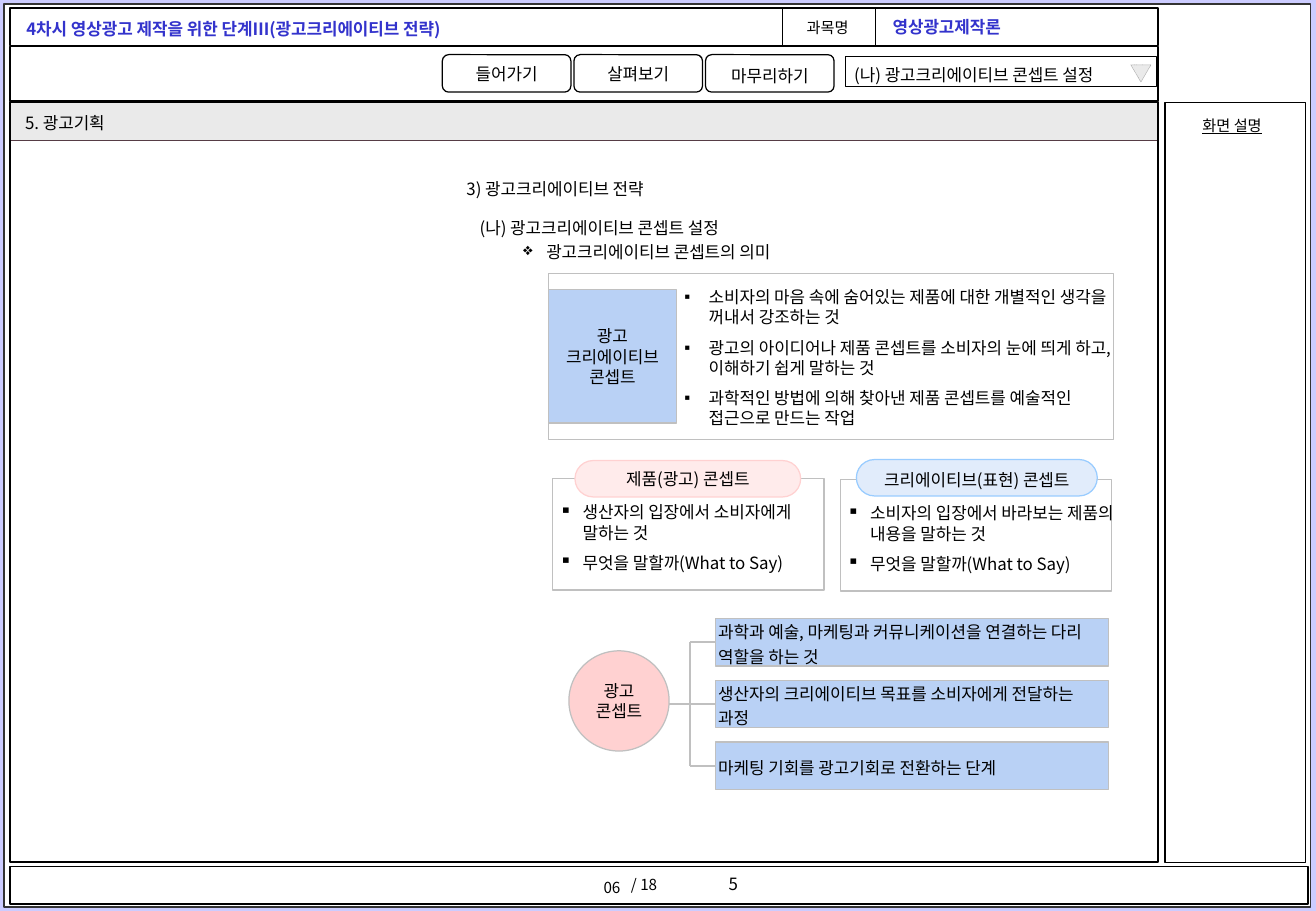
"""Build the storyboard slide on advertising creative concepts."""
from lxml import etree
from pptx import Presentation
from pptx.dml.color import RGBColor
from pptx.enum.dml import MSO_LINE
from pptx.enum.shapes import MSO_CONNECTOR, MSO_SHAPE
from pptx.enum.text import MSO_ANCHOR, MSO_AUTO_SIZE, PP_ALIGN
from pptx.oxml.ns import qn
from pptx.util import Inches, Pt

RECT, ROUND = MSO_SHAPE.RECTANGLE, MSO_SHAPE.ROUNDED_RECTANGLE
OVAL, WEDGE = MSO_SHAPE.OVAL, MSO_SHAPE.ISOSCELES_TRIANGLE
LEFT, MID, RIGHT = PP_ALIGN.LEFT, PP_ALIGN.CENTER, PP_ALIGN.RIGHT
TOP, CENTER = MSO_ANCHOR.TOP, MSO_ANCHOR.MIDDLE
STRAIGHT, FIXED, DOTS = MSO_CONNECTOR.STRAIGHT, MSO_AUTO_SIZE.NONE, MSO_LINE.ROUND_DOT
BLACK = RGBColor(0x00, 0x00, 0x00)
WHITE = RGBColor(0xFF, 0xFF, 0xFF)
INK = RGBColor(0x33, 0x33, 0x33)
NAVY = RGBColor(0x33, 0x33, 0xCC)
LILAC = RGBColor(0xCC, 0xCC, 0xFF)
PALE = RGBColor(0xEA, 0xEA, 0xEA)
PLUM = RGBColor(0x56, 0x3C, 0x45)
GRAY = RGBColor(0x96, 0x96, 0x96)
SILVER = RGBColor(0xC0, 0xC0, 0xC0)
BLUE = RGBColor(0xB9, 0xD1, 0xF5)
ICE = RGBColor(0xE1, 0xEC, 0xFB)
SKY = RGBColor(0x99, 0xCC, 0xFF)
PINK = RGBColor(0xFF, 0xD1, 0xD1)
BLUSH = RGBColor(0xFF, 0xEB, 0xEB)
FONT = "Noto Sans CJK KR"
CELL = Inches(1) / 12
COLS, ROWS = 130, 90
TIGHT = (0.02, 0.05)

deck = Presentation()
deck.slide_width, deck.slide_height = round(COLS * CELL), round(ROWS * CELL)
page = deck.slides.add_slide(deck.slide_layouts[1])
shapes = page.shapes
head, body = page.placeholders


def box(kind, at, fill=None, edge=None, width=0.75):
    """Add a shape, or a text box when kind is None, at grid cells."""
    spot = [round(v * CELL) for v in at]
    if kind is None:
        return shapes.add_textbox(*spot)
    item = shapes.add_shape(kind, *spot)
    item.shadow.inherit = False
    if fill is None:
        item.fill.background()
    else:
        item.fill.solid()
        item.fill.fore_color.rgb = fill
    if edge is None:
        item.line.fill.background()
    else:
        item.line.color.rgb = edge
        item.line.width = Pt(width)
    return item


def write(item, text, size=10, color=BLACK, bold=False, align=LEFT, lead=1.0,
          anchor=TOP, pad=(0.1, 0.05), wrap=True, mark=None, hang=0.19):
    """Fill a shape with formatted text and return its frame."""
    frame = item.text_frame
    frame.text = text
    frame.auto_size = FIXED
    frame.word_wrap = wrap
    frame.vertical_anchor = anchor
    frame.margin_left = frame.margin_right = Inches(pad[0])
    frame.margin_top = frame.margin_bottom = Inches(pad[1])
    for rank, para in enumerate(frame.paragraphs):
        para.alignment = align
        para.line_spacing = lead
        para.space_before = Pt(6 if rank and mark else 0)
        if mark:
            props = para._p.get_or_add_pPr()
            props.set("marL", str(Inches(hang)))
            props.set("indent", str(-Inches(hang)))
            etree.SubElement(props, qn("a:buChar")).set("char", mark)
        for run in para.runs:
            run.font.size = Pt(size)
            run.font.bold = bold
            run.font.color.rgb = color
            run.font.name = FONT
            east = etree.SubElement(run._r.get_or_add_rPr(), qn("a:ea"))
            east.set("typeface", FONT)
    return frame


for at, fill, edge, width in [
    ((0, 0, COLS, ROWS), LILAC, None, 0),
    ((0.4, 0.4, 129.1, 89.2), WHITE, INK, 0.75),
    ((1, 10.1, 113.4, 3.8), PALE, PLUM, 0.25),
    ((1, 85.6, 128.2, 3.7), None, BLACK, 1),
    ((1, 10.1, 113.4, 75.1), None, BLACK, 1),
    ((115.1, 10.1, 13.9, 75.1), None, BLACK, 0.75),
    ((1, 0.8, 113.4, 3.7), None, BLACK, 1),
    ((77.3, 0.8, 9.2, 3.7), None, BLACK, 1),
    ((1, 4.6, 113.4, 5.4), None, BLACK, 1),
    ((83.5, 5.6, 30.7, 2.9), WHITE, BLACK, 0.25),
]:
    box(RECT, at, fill, edge, width)

arrow = box(WEDGE, (111.7, 6.4, 2, 1.7), PALE, GRAY, 0.25)
arrow.rotation = 180
arrow.line.dash_style = DOTS

for rank, (name, lead) in enumerate(
        [("들어가기", 1.0), ("살펴보기", 1.0), ("마무리하기", 1.2)]):
    key = box(ROUND, (43.7 + 13 * rank, 5.4, 12.7, 3.7), WHITE, BLACK)
    write(key, name, align=MID, lead=lead, anchor=CENTER, wrap=False)

shapes.element.append(head.element)
head.left, head.top, head.width, head.height = [
    round(v * CELL) for v in (1.4, 1.2, 62, 3.2)]
write(head, "4차시 영상광고 제작을 위한 단계Ⅲ(광고크리에이티브 전략)",
      color=NAVY, bold=True)

write(box(None, (87, 0.7, 27.1, 3.4)), "영상광고제작론",
      color=NAVY, bold=True, lead=1.2)
write(box(None, (78.5, 1.2, 7, 3)), "과목명", size=9, wrap=False)
side = write(box(None, (117.6, 10.9, 8.9, 3)), "화면 설명", size=9, wrap=False)
side.paragraphs[0].runs[0].font.underline = True

for at, text in [
    ((83.2, 5.4, 30.8, 3.7), "(나) 광고크리에이티브 콘셉트 설정"),
    ((1.3, 10.1, 63.7, 3.7), "5. 광고기획"),
    ((44.9, 16.7, 20.8, 3.5), "3) 광고크리에이티브 전략"),
    ((46.2, 20.5, 35.2, 3.5), "(나) 광고크리에이티브 콘셉트 설정"),
]:
    write(box(None, at), text, lead=1.2)
write(box(None, (50.5, 23.3, 28.7, 3.2)), "광고크리에이티브 콘셉트의 의미", mark="❖")

for at, text, size, align, lead in [
    ((58.1, 85.8, 4.7, 3.4), "06", 9, MID, 1.2),
    ((60.8, 85.9, 5.3, 3), "/ 18", 9, RIGHT, 1.0),
    ((70.8, 85.7, 4.9, 3.2), "5", 10, LEFT, 1.0),
]:
    write(box(None, at), text, size=size, align=align, lead=lead, wrap=False)

box(RECT, (54.2, 27, 55.8, 16.4), WHITE, SILVER)
write(box(RECT, (54.2, 28.6, 12.6, 13.2), BLUE, SILVER),
      "광고 크리에이티브 콘셉트", align=MID, anchor=CENTER, pad=TIGHT)
shapes.element.append(body.element)
body.left, body.top, body.width, body.height = [
    round(v * CELL) for v in (66.4, 27.7, 46, 15.4)]
write(body, "소비자의 마음 속에 숨어있는 제품에 대한 개별적인 생각을 꺼내서 강조하는 것\n"
      "광고의 아이디어나 제품 콘셉트를 소비자의 눈에 띄게 하고, 이해하기 쉽게 말하는 것\n"
      "과학적인 방법에 의해 찾아낸 제품 콘셉트를 예술적인 접근으로 만드는 작업",
      mark="▪", hang=0.2)

for left, top, name, point, pill, fill, edge, lead in [
    (54.6, 47.3, "제품(광고) 콘셉트", "생산자의 입장에서 소비자에게 말하는 것",
     (56.8, 45.5, 22.3, 3.6), BLUSH, PINK, 1.0),
    (83, 47.4, "크리에이티브(표현) 콘셉트", "소비자의 입장에서 바라보는 제품의 내용을 말하는 것",
     (84.6, 45.4, 23.8, 3.6), ICE, SKY, 1.2),
]:
    box(RECT, (left, top, 26.8, 11), WHITE, SILVER)
    write(box(None, (left - 0.5, top + 1.7, 29.3, 8.3)),
          point + "\n무엇을 말할까(What to Say)", mark="▪")
    label = box(ROUND, pill, fill, edge)
    label.adjustments[0] = 0.5
    write(label, name, align=MID, lead=lead, anchor=CENTER, pad=(0.02, 0.01), wrap=False)

STEM, FIRST, PITCH, TALL = 68.2, 61.1, 6.1, 4.7
lines = []
for rank, text in enumerate([
    "과학과 예술, 마케팅과 커뮤니케이션을 연결하는 다리 역할을 하는 것",
    "생산자의 크리에이티브 목표를 소비자에게 전달하는 과정",
    "마케팅 기회를 광고기회로 전환하는 단계",
]):
    top = FIRST + PITCH * rank
    bar = box(RECT, (70.7, top, 38.8, TALL), BLUE, SILVER)
    write(bar, text, lead=1.2, anchor=CENTER, pad=TIGHT)
    start = 65.4 if rank == 1 else STEM
    y = round((top + TALL / 2) * CELL)
    line = shapes.add_connector(STRAIGHT, round(start * CELL), y, bar.left, y)
    line.end_connect(bar, 1)
    lines.append(line)
x = round(STEM * CELL)
lines.append(shapes.add_connector(STRAIGHT, x, lines[0].begin_y, x, lines[2].begin_y))
for line in lines:
    line.line.color.rgb = SILVER
    line.line.width = Pt(1.25)
    etree.SubElement(line.element.spPr, qn("a:effectLst"))

write(box(OVAL, (56.2, 64.3, 9.9, 9.9), PINK, SILVER), "광고\n콘셉트",
      align=MID, anchor=CENTER, pad=TIGHT)

deck.save("out.pptx")
